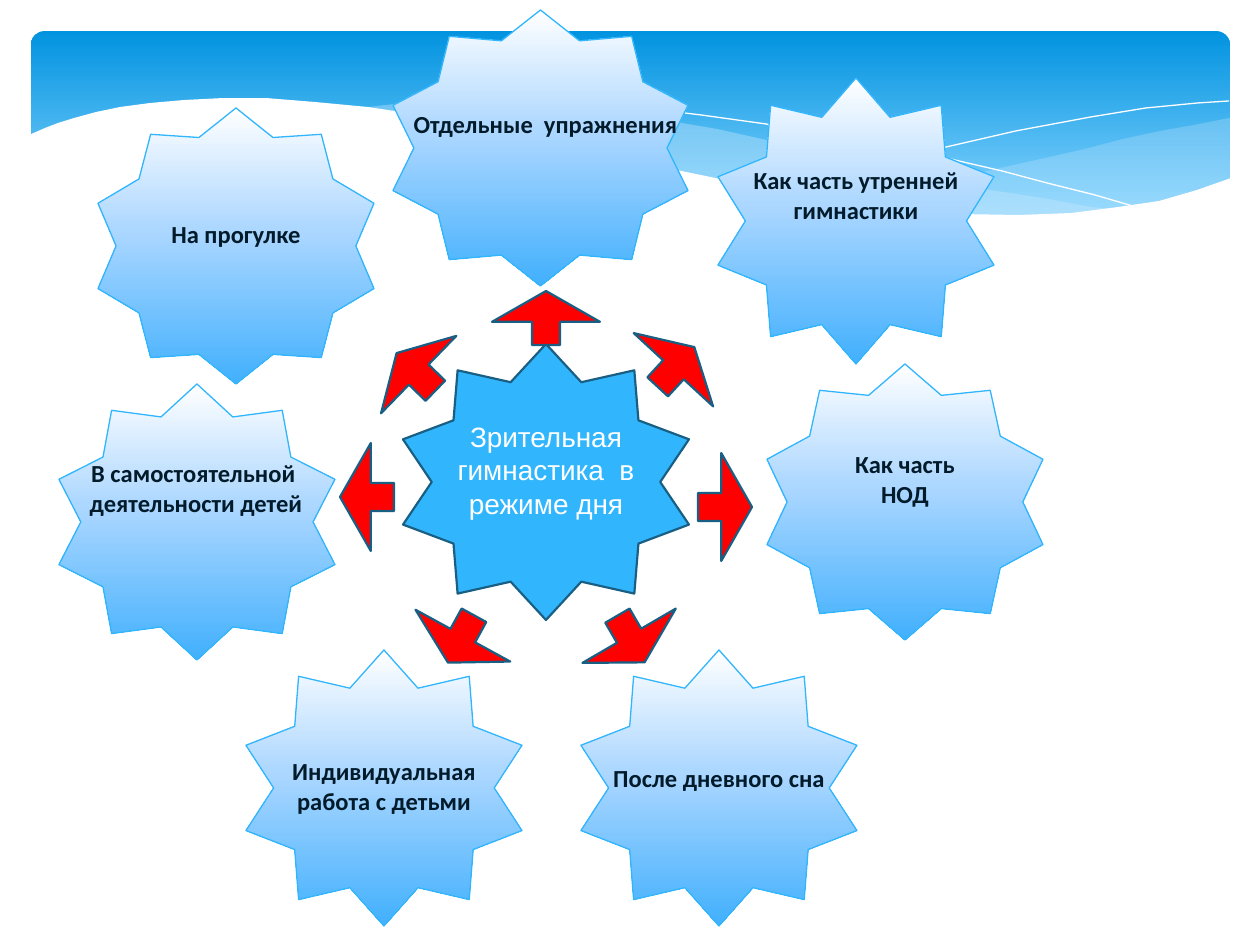
import copy

import lxml.etree
import pptx
import pptx.dml.color
import pptx.enum.shapes
import pptx.enum.text
import pptx.oxml.ns
import pptx.util

RGBColor = pptx.dml.color.RGBColor
Shapes = pptx.enum.shapes.MSO_SHAPE
WHITE = RGBColor(0xFF, 0xFF, 0xFF)
HEADER_TOP = RGBColor(0x02, 0x93, 0xE0)
HEADER_BOTTOM = RGBColor(0x83, 0xD3, 0xFE)
WAVE = RGBColor(0xC6, 0xE7, 0xFC)
SKY = RGBColor(0x31, 0xB6, 0xFD)
STAR_MIDDLE = RGBColor(0xAC, 0xD7, 0xFF)
STAR_BOTTOM = RGBColor(0x42, 0xB0, 0xFD)
OUTLINE = RGBColor(0x19, 0x5F, 0x84)
RED = RGBColor(0xFF, 0x00, 0x00)
INK = RGBColor(0x02, 0x1B, 0x2B)

PX = 914400 / 126
HEADER_STOPS = [(0, HEADER_TOP), (0.9, HEADER_BOTTOM)]
STAR_STOPS = [(0, WHITE), (0.44, STAR_MIDDLE), (1, STAR_BOTTOM)]

RIGHT_WAVE = [
    (1229, 118), (1194, 125), (1160, 131), (1123, 139), (1085, 149), (1014, 165),
    (949, 180), (890, 191), (833, 202), (871, 207), (906, 210), (938, 212),
    (969, 214), (998, 217), (1026, 217), (1053, 217), (1077, 214), (1099, 212),
    (1120, 209), (1140, 205), (1160, 202), (1178, 197), (1196, 192), (1213, 185),
    (1230, 178), (1230, 118)]
LONG_WAVE = [
    (1125, 210), (1091, 207), (1055, 200), (1017, 194), (977, 188), (934, 179),
    (890, 169), (842, 159), (793, 146), (753, 137), (717, 129), (682, 123),
    (648, 116), (616, 112), (557, 105), (503, 101), (455, 101), (413, 102),
    (377, 106), (360, 108), (407, 113), (456, 122), (509, 133), (566, 146),
    (619, 159), (668, 170), (713, 180), (757, 189), (799, 197), (838, 203),
    (876, 208), (910, 212), (942, 214), (974, 217), (1003, 218), (1031, 218),
    (1056, 217), (1081, 215), (1104, 213)]
FALLING_LINE = [
    (389, 113), (413, 108), (445, 106), (488, 103), (546, 103), (591, 104),
    (643, 108), (701, 115), (766, 124), (838, 136), (916, 151), (1002, 171),
    (1047, 183), (1095, 195), (1143, 209)]
RISING_LINE = [
    (772, 190), (823, 178), (876, 164), (942, 148), (1016, 131), (1091, 117),
    (1146, 108), (1198, 103), (1229, 101)]
WHITE_WAVE = [
    (1231, 178), (1197, 190), (1159, 201), (1118, 207), (1071, 213), (1019, 215),
    (959, 214), (892, 208), (816, 197), (730, 181), (633, 161), (563, 144),
    (492, 128), (428, 116), (368, 107), (315, 102), (266, 98), (223, 98),
    (184, 100), (150, 103), (120, 107), (96, 112), (74, 118), (58, 123),
    (45, 128), (29, 135), (29, 282), (1231, 282)]

STARS = [
    ((98, 108, 276, 276), 0.413, (108, 213, 256, 43), ["На прогулке"]),
    ((393, 10, 295, 276), 0.408, (393, 103, 305, 72), ["Отдельные  упражнения"]),
    ((59, 384, 276, 276), 0.4, (68, 452, 256, 131),
     ["В самостоятельной  деятельности детей"]),
    ((246, 650, 276, 276), 0.38, (256, 750, 256, 72),
     ["Индивидуальная работа с детьми"]),
    ((718, 78, 276, 286), 0.381, (728, 159, 256, 131),
     ["Как часть утренней гимнастики"]),
    ((581, 650, 276, 276), 0.38, (591, 757, 256, 72), ["После дневного сна"]),
    ((767, 364, 276, 276), 0.406, (777, 443, 256, 72), ["Как часть", "НОД"]),
]
ARROWS = [(407, 612, 28.7), (313, 470, 90), (577, 612, 329.8), (671, 480, 270),
          (492, 291, 180), (362, 345, 134.2), (622, 340, 222.7)]


def px(*lengths):
    """Turn px lengths into EMU."""
    return [round(length * PX) for length in lengths]


def fill_gradient(shape, stops):
    """Fill a shape from top to bottom with any number of stops."""
    shape.fill.gradient()
    shape.fill.gradient_angle = 270
    stop_list = shape._element.spPr.find(".//" + pptx.oxml.ns.qn("a:gsLst"))
    while len(stop_list) < len(stops):
        stop_list.append(copy.deepcopy(stop_list[-1]))
    for stop, (position, color) in zip(shape.fill.gradient_stops, stops):
        stop.position = position
        stop.color.rgb = color


def paint(shape, fill=None, line=None, width=0):
    """Set solid fill, outline and no shadow."""
    shape.shadow.inherit = False
    if fill is None:
        shape.fill.background()
    else:
        shape.fill.solid()
        shape.fill.fore_color.rgb = fill
    if line is None:
        shape.line.fill.background()
    else:
        shape.line.color.rgb = line
        shape.line.width = pptx.util.Pt(width)


def add_preset(page, kind, frame, adjustment):
    """Add a preset shape with its first adjustment set."""
    shape = page.shapes.add_shape(kind, *px(*frame))
    shape.adjustments[0] = adjustment
    return shape


def add_curve(page, points, fill=None, line=None, alpha=None):
    """Add a wave area, or an open line when there is no fill."""
    builder = page.shapes.build_freeform(*points[0], scale=PX)
    builder.add_line_segments(points[1:], close=fill is not None)
    shape = builder.convert_to_shape()
    paint(shape, fill, line)
    if alpha is not None:
        color = shape._element.spPr.find(".//" + pptx.oxml.ns.qn("a:srgbClr"))
        opacity = lxml.etree.SubElement(color, pptx.oxml.ns.qn("a:alpha"))
        opacity.set("val", str(alpha * 1000))


def add_label(page, frame, lines, font, size, color, bold=False):
    """Add centred wrapped text, one paragraph per line."""
    box = page.shapes.add_textbox(*px(*frame))
    text = box.text_frame
    text.word_wrap = True
    text.auto_size = pptx.enum.text.MSO_AUTO_SIZE.SHAPE_TO_FIT_TEXT
    for index, line in enumerate(lines):
        para = text.add_paragraph() if index else text.paragraphs[0]
        para.alignment = pptx.enum.text.PP_ALIGN.CENTER
        span = para.add_run()
        span.text = line
        span.font.name = font
        span.font.size = pptx.util.Pt(size)
        span.font.bold = bold
        span.font.color.rgb = color


def add_header(page):
    """Add the blue band and its waves."""
    band = add_preset(page, Shapes.ROUNDED_RECTANGLE, (31, 31, 1199, 197), 0.07)
    paint(band)
    fill_gradient(band, HEADER_STOPS)
    add_curve(page, RIGHT_WAVE, fill=WAVE, alpha=29)
    add_curve(page, LONG_WAVE, fill=WAVE, alpha=40)
    add_curve(page, FALLING_LINE, line=WHITE)
    add_curve(page, RISING_LINE, line=WHITE)
    add_curve(page, WHITE_WAVE, fill=WHITE)


def add_star(page, frame, depth, label_frame, lines):
    """Add an outer star with its label."""
    star = add_preset(page, Shapes.STAR_10_POINT, frame, depth)
    paint(star, line=SKY, width=0.75)
    fill_gradient(star, STAR_STOPS)
    add_label(page, label_frame, lines, "Calibri", 14, INK, bold=True)


def add_arrow(page, left, top, rotation):
    """Add a red arrow pointing away from the centre."""
    arrow = add_preset(page, Shapes.DOWN_ARROW, (left, top, 108, 54), 0.26)
    arrow.adjustments[1] = 0.57
    arrow.rotation = rotation
    paint(arrow, RED, OUTLINE, 1.25)


def main():
    """Build the slide and save it."""
    deck = pptx.Presentation()
    deck.slide_width, deck.slide_height = px(1260, 945)
    page = deck.slides.add_slide(deck.slide_layouts[6])
    add_header(page)
    center = add_preset(page, Shapes.STAR_10_POINT, (403, 344, 286, 276), 0.38)
    paint(center, SKY, OUTLINE, 1.25)
    add_label(page, (403, 413, 286, 115), ["Зрительная гимнастика  в режиме дня"],
              "Arial", 16, WHITE)
    for star in STARS:
        add_star(page, *star)
    for arrow in ARROWS:
        add_arrow(page, *arrow)
    deck.save("out.pptx")


if __name__ == "__main__":
    main()
